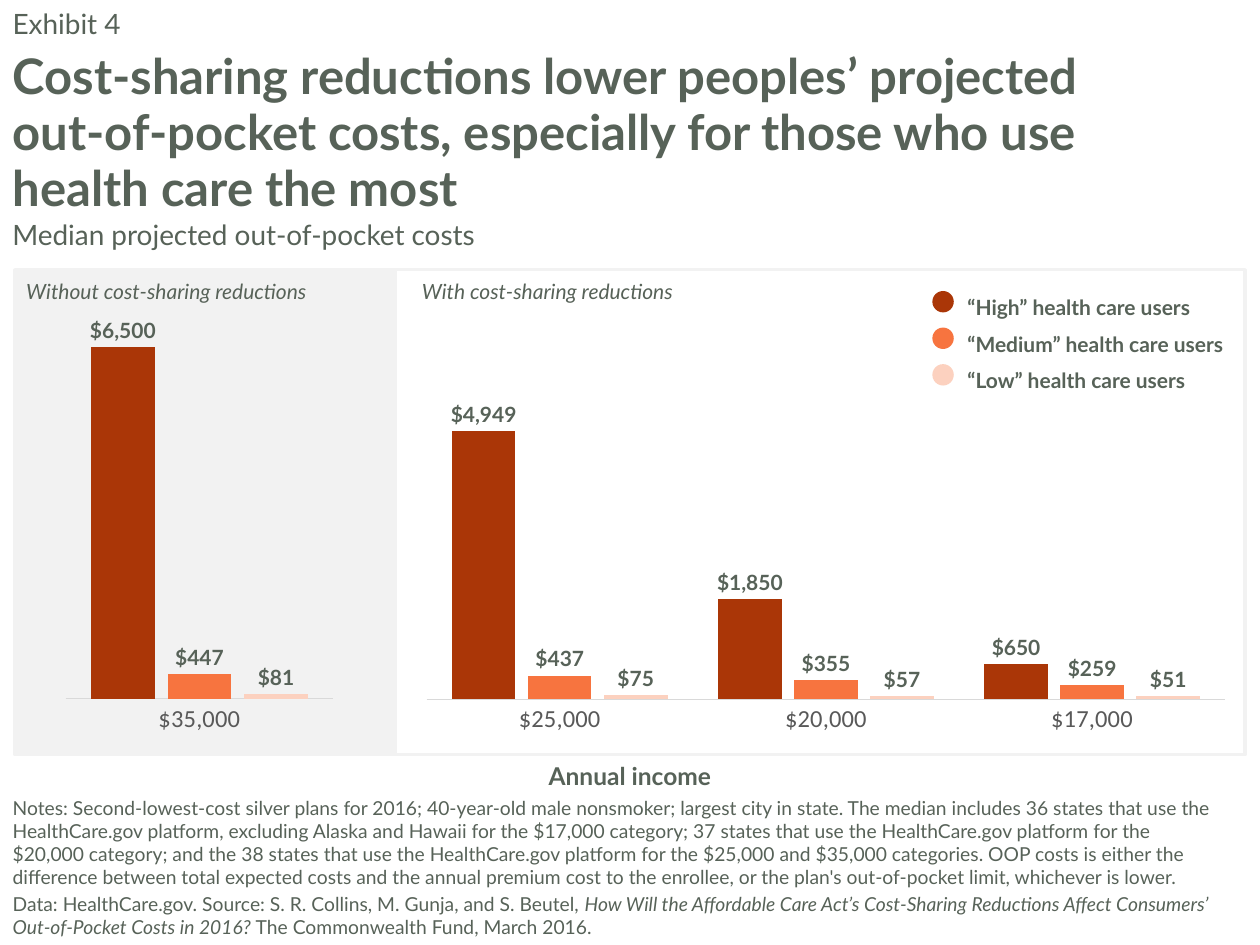
from dataclasses import dataclass

from lxml import etree
from pptx import Presentation
from pptx.chart.data import CategoryChartData
from pptx.dml.color import RGBColor
from pptx.enum.chart import XL_CHART_TYPE, XL_LABEL_POSITION, XL_TICK_MARK
from pptx.enum.shapes import MSO_SHAPE
from pptx.enum.text import MSO_ANCHOR, MSO_AUTO_SIZE, PP_ALIGN
from pptx.oxml import parse_xml
from pptx.oxml.ns import nsdecls, qn
from pptx.util import Inches, Pt

COLUMNS = XL_CHART_TYPE.COLUMN_CLUSTERED
OUTSIDE_END = XL_LABEL_POSITION.OUTSIDE_END
NO_TICKS = XL_TICK_MARK.NONE
RECTANGLE, OVAL = MSO_SHAPE.RECTANGLE, MSO_SHAPE.OVAL
TOP, BOTTOM = MSO_ANCHOR.TOP, MSO_ANCHOR.BOTTOM
LEFT, CENTER = PP_ALIGN.LEFT, PP_ALIGN.CENTER
FIXED = MSO_AUTO_SIZE.NONE


@dataclass(frozen=True)
class Theme:
    font: str = "Lato"
    axis_font: str = "Calibri"
    ink: RGBColor = RGBColor(0x57, 0x62, 0x58)
    axis_ink: RGBColor = RGBColor(0x59, 0x59, 0x59)
    axis_line: RGBColor = RGBColor(0xD9, 0xD9, 0xD9)
    panel: RGBColor = RGBColor(0xF2, 0xF2, 0xF2)
    high: RGBColor = RGBColor(0xAA, 0x36, 0x07)
    medium: RGBColor = RGBColor(0xF7, 0x74, 0x3F)
    low: RGBColor = RGBColor(0xFC, 0xD1, 0xBF)
    title: Pt = Pt(28)
    lead: Pt = Pt(16)
    axis: Pt = Pt(14)
    label: Pt = Pt(12)
    notes: Pt = Pt(11)


THEME = Theme()
DOLLARS = '"$"#,##0'
USERS = [("High", THEME.high), ("Medium", THEME.medium), ("Low", THEME.low)]


def place(shape, left, top, width, height):
    shape.left, shape.top = Inches(left), Inches(top)
    shape.width, shape.height = Inches(width), Inches(height)


def write(shape, paragraphs, size, bold=False, italic=False, align=LEFT,
          spacing=1.0, anchor=TOP, wrap=True):
    """Fill a shape with paragraphs, each a list of (text, is_italic) runs or a string."""
    frame = shape.text_frame
    frame.auto_size, frame.word_wrap, frame.vertical_anchor = FIXED, wrap, anchor
    for index, runs in enumerate(paragraphs):
        paragraph = frame.add_paragraph() if index else frame.paragraphs[0]
        paragraph.alignment, paragraph.line_spacing = align, spacing
        paragraph.space_before = Pt(2.2) if index else Pt(0)
        for text, slanted in [(runs, italic)] if isinstance(runs, str) else runs:
            run = paragraph.add_run()
            run.text = text
            run.font.color.rgb = THEME.ink
            style = {"name": THEME.font, "size": size, "bold": bold, "italic": slanted}
            for key, value in style.items():
                setattr(run.font, key, value)


prs = Presentation()
prs.slide_width, prs.slide_height = Inches(10), Inches(7.5)
slide = prs.slides.add_slide(prs.slide_layouts[4])
shapes = slide.shapes
held = {p.placeholder_format.idx: p for p in slide.placeholders}
title, exhibit, notes = held[0], held[1], held[3]
for unused in (held[2], held[4]):
    unused.element.getparent().remove(unused.element)

# Headline and notes
place(title, 0, 0.33, 9.32, 1.45)
write(title, ["Cost-sharing reductions lower peoples’ projected out-of-pocket costs, "
              "especially for those who use health care the most"],
      THEME.title, bold=True, spacing=Pt(32))
place(exhibit, 0, 0, 10, 0.33)
write(exhibit, ["Exhibit 4"], THEME.lead)
place(notes, 0, 6.83, 9.83, 0.67)
write(notes, [
    "Notes: Second-lowest-cost silver plans for 2016; 40-year-old male nonsmoker; largest "
    "city in state. The median includes 36 states that use the HealthCare.gov platform, "
    "excluding Alaska and Hawaii for the $17,000 category; 37 states that use the "
    "HealthCare.gov platform for the $20,000 category; and the 38 states that use the "
    "HealthCare.gov platform for the $25,000 and $35,000 categories. OOP costs is either "
    "the difference between total expected costs and the annual premium cost to the "
    "enrollee, or the plan's out-of-pocket limit, whichever is lower.",
    [("Data: HealthCare.gov. Source: S. R. Collins, M. Gunja, and S. Beutel, ", False),
     ("How Will the Affordable Care Act’s Cost-Sharing Reductions Affect Consumers’ "
      "Out-of-Pocket Costs in 2016?", True),
     (" The Commonwealth Fund, March 2016.", False)],
], THEME.notes, anchor=BOTTOM)

# Panels behind the charts
for left, width, filled in [(0.12, 3.02, True), (3.13, 6.75, False)]:
    panel = shapes.add_shape(RECTANGLE, Inches(left), Inches(2.14), Inches(width), Inches(3.85))
    panel.shadow.inherit = False
    panel.line.color.rgb, panel.line.width = THEME.panel, Pt(2)
    if filled:
        panel.fill.solid()
        panel.fill.fore_color.rgb = THEME.panel
    else:
        panel.fill.background()

# Captions
captions = [
    ("Median projected out-of-pocket costs", (0, 1.68, 8.95, 0.37), {"size": THEME.lead}),
    ("Without cost-sharing reductions", (0.11, 2.16, 2.8, 0.3),
     {"size": THEME.label, "italic": True}),
    ("With cost-sharing reductions", (3.25, 2.16, 2.8, 0.3),
     {"size": THEME.label, "italic": True}),
    ("Annual income", (0, 5.99, 10, 0.34),
     {"size": THEME.axis, "bold": True, "align": CENTER}),
]
for text, box, style in captions:
    write(shapes.add_textbox(*map(Inches, box)), [text], **style)

# Charts: left, width, axis maximum, inner plot (x, y, w, h), incomes, costs per user group
charts = [
    (0.23, 2.93, 7000, (0.099, 0.018, 0.726, 0.753), [35000], [[6500], [447], [81]]),
    (3.38, 6.35, 6000, (0.001, 0.126, 0.999, 0.646), [25000, 20000, 17000],
     [[4949, 1850, 650], [437, 355, 259], [75, 57, 51]]),
]
for left, width, maximum, plot_box, incomes, costs in charts:
    data = CategoryChartData(number_format=DOLLARS)
    data.categories = incomes
    data.categories.number_format = DOLLARS
    for (user, _), values in zip(USERS, costs):
        data.add_series(user, values)
    chart = shapes.add_chart(COLUMNS, Inches(left), Inches(2.47), Inches(width),
                             Inches(3.99), data).chart
    chart.has_title = chart.has_legend = False
    chart.font.name, chart.font.size = THEME.axis_font, Pt(10)

    cost_axis, income_axis = chart.value_axis, chart.category_axis
    cost_axis.minimum_scale, cost_axis.maximum_scale = 0, maximum
    cost_axis.has_major_gridlines = cost_axis.visible = False
    income_axis.major_tick_mark = income_axis.minor_tick_mark = NO_TICKS
    income_axis.format.line.color.rgb = THEME.axis_line
    income_axis.format.line.width = Pt(0.75)
    ticks = income_axis.tick_labels
    ticks.number_format, ticks.number_format_is_linked = DOLLARS, False
    ticks.font.name, ticks.font.size = THEME.axis_font, THEME.axis
    ticks.font.color.rgb = THEME.axis_ink

    plot = chart.plots[0]
    plot.gap_width, plot.overlap, plot.vary_by_categories = 80, -20, False
    for series, (_, color) in zip(plot.series, USERS):
        series.format.fill.solid()
        series.format.fill.fore_color.rgb = color
        labels = series.data_labels
        label_format = {"show_value": True, "position": OUTSIDE_END,
                        "number_format": DOLLARS, "number_format_is_linked": False}
        for key, value in label_format.items():
            setattr(labels, key, value)
        labels.font.name, labels.font.size, labels.font.bold = THEME.font, THEME.label, True
        labels.font.color.rgb = THEME.ink

    chart_xml = chart.element.find(qn("c:chart"))
    chart_xml.addnext(parse_xml(
        f'<c:spPr {nsdecls("c", "a")}><a:noFill/><a:ln><a:noFill/></a:ln></c:spPr>'))
    area = chart_xml.find(qn("c:plotArea"))
    for old in area.findall(qn("c:layout")):
        area.remove(old)
    layout = etree.Element(qn("c:layout"))
    manual = etree.SubElement(layout, qn("c:manualLayout"))
    settings = [("layoutTarget", "inner"), ("xMode", "edge"), ("yMode", "edge"),
                *zip("xywh", plot_box)]
    for tag, value in settings:
        etree.SubElement(manual, qn(f"c:{tag}")).set("val", str(value))
    area.insert(0, layout)

# Legend
legend = shapes.add_group_shape().shapes
for row, (user, color) in enumerate(USERS):
    offset = 0.29 * row
    entry = legend.add_textbox(Inches(7.58), Inches(2.19 + offset), Inches(2.4), Inches(0.4))
    write(entry, [f"“{user}” health care users"], THEME.label, bold=True,
          spacing=1.5, wrap=False)
    dot = legend.add_shape(OVAL, Inches(7.4), Inches(2.31 + offset), Inches(0.17), Inches(0.17))
    dot.shadow.inherit = False
    dot.fill.solid()
    dot.fill.fore_color.rgb = color
    dot.line.fill.background()

prs.save("out.pptx")
